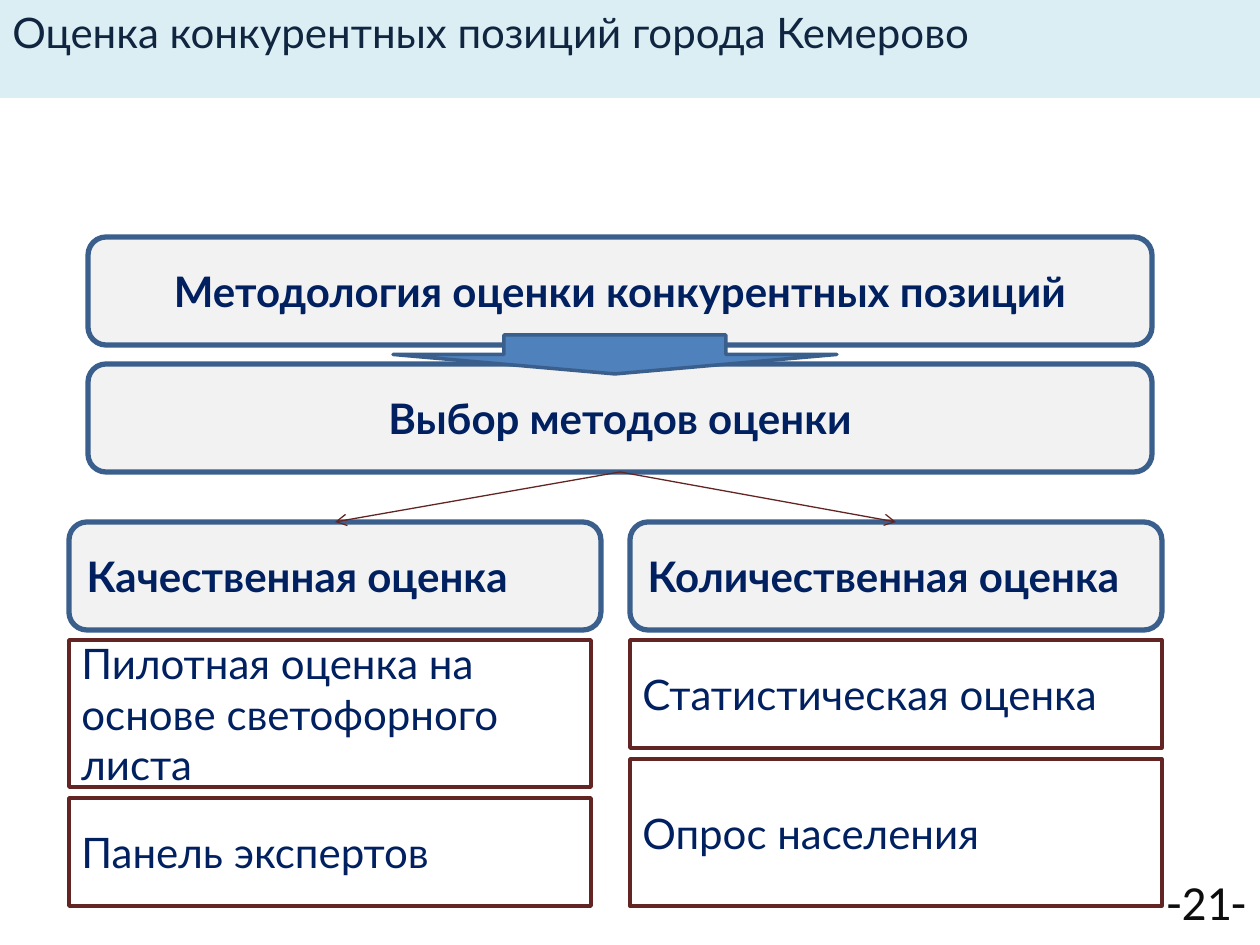
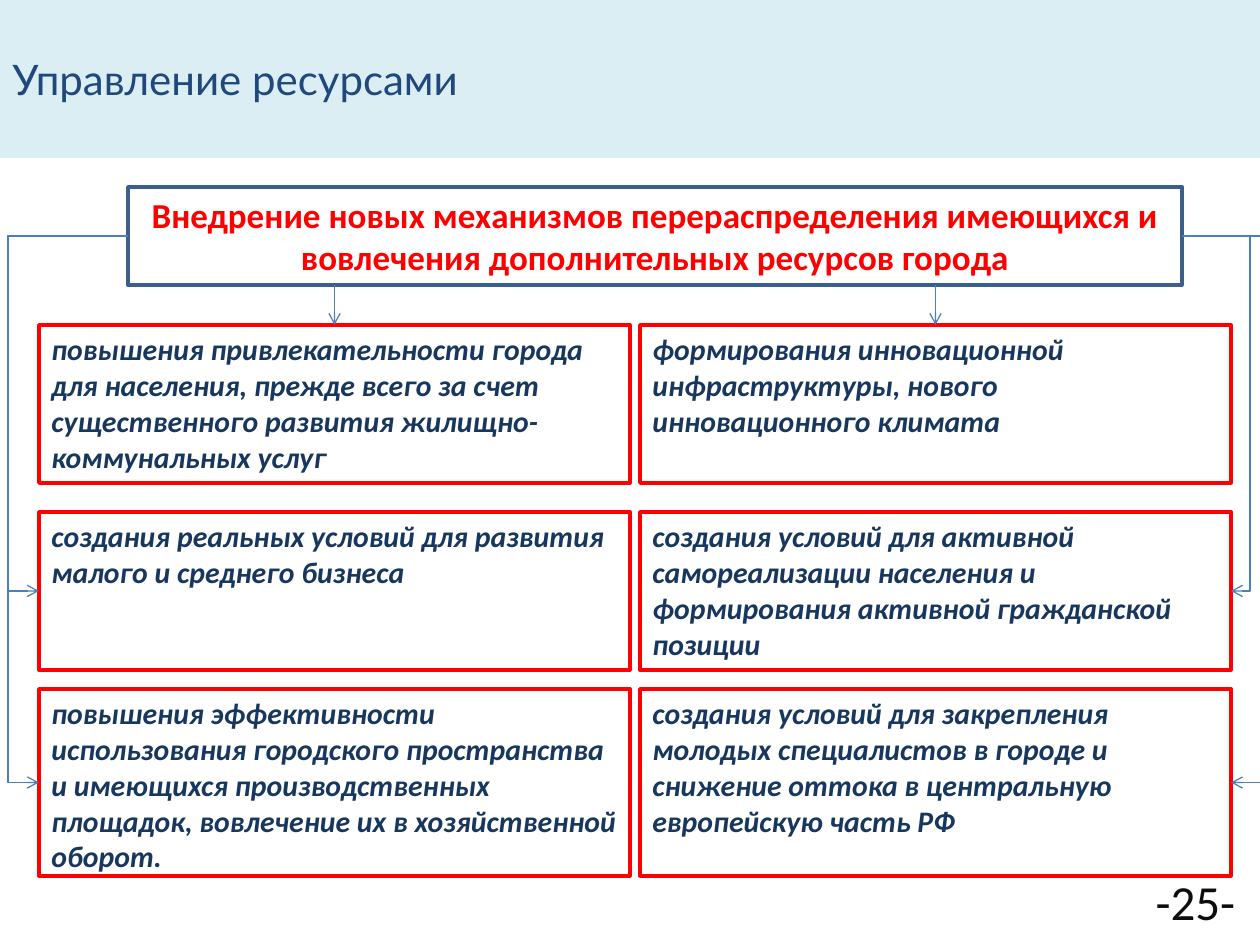
from lxml import etree
from pptx import Presentation
from pptx.dml.color import RGBColor as Rgb
from pptx.enum.shapes import MSO_CONNECTOR as Link, MSO_SHAPE as Form
from pptx.enum.text import MSO_ANCHOR as Anchor, PP_ALIGN as Align
from pptx.oxml.ns import qn
from pptx.util import Emu, Pt

HUES = {
    "band": "DBEEF4", "ink": "10253F", "title": "1F497D", "page": "0D0D0D",
    "navy": "002060", "slate": "17375E", "grey": "F2F2F2", "white": "FFFFFF",
    "edge": "3A5F8C", "blue": "4F81BD", "link": "4B7EBC", "wine": "632523",
    "red": "FF0000",
}


def px(num):
    return Emu(round(num * 914400 / 126))


def hue(name):
    return Rgb.from_string(HUES[name])


class Deck:
    """Holds the shared style and draws on the current slide."""

    def __init__(self):
        self.prs = Presentation()
        self.prs.slide_width, self.prs.slide_height = px(1260), px(945)

    def page(self, title, tall, tone, anchor, num, left):
        self.slide = self.prs.slides.add_slide(self.prs.slide_layouts[6])
        self.box((0, 0, 1260, tall), "band", None, text=title, tone=tone, anchor=anchor)
        mark = self.slide.shapes.add_textbox(*map(px, (left, 857, 129, 88)))
        self.label(mark, f"-{num}-", tone="page", size=28, font="Calibri", align=Align.CENTER)

    def label(self, shape, text, tone="navy", size=24, font="Lato", bold=False,
              italic=False, align=Align.LEFT, anchor=Anchor.MIDDLE):
        frame = shape.text_frame
        frame.word_wrap = True
        frame.vertical_anchor = anchor
        para = frame.paragraphs[0]
        para.alignment = align
        run = para.add_run()
        run.text = text
        run.font.name, run.font.size = font, Pt(size)
        run.font.bold, run.font.italic = bold, italic
        run.font.color.rgb = hue(tone)

    def box(self, area, fill, edge, width=2, form=Form.RECTANGLE, text=None, **style):
        shape = self.slide.shapes.add_shape(form, *map(px, area))
        shape.shadow.inherit = False
        shape.fill.solid()
        shape.fill.fore_color.rgb = hue(fill)
        if edge:
            shape.line.color.rgb = hue(edge)
            shape.line.width = Pt(width)
        else:
            shape.line.fill.background()
        if text:
            self.label(shape, text, **style)
        return shape

    def panel(self, area, text, align=Align.LEFT):
        return self.box(area, "grey", "edge", 3, Form.ROUNDED_RECTANGLE,
                        text, bold=True, align=align)

    def arrow(self, start, end, tone, kind=Link.STRAIGHT):
        line = self.slide.shapes.add_connector(kind, *map(px, start + end))
        line.line.color.rgb = hue(tone)
        line.line.width = Pt(0.75)
        props = line.element.spPr
        tail = etree.SubElement(props.find(qn("a:ln")), qn("a:tailEnd"))
        tail.set("type", "arrow")
        etree.SubElement(props, qn("a:effectLst"))
        return line

    def elbow(self, head, box, side, start, end, bend):
        line = self.arrow(start, end, "link", Link.ELBOW)
        line.begin_connect(head, side)
        line.end_connect(box, side)
        geom = line.element.spPr.find(qn("a:prstGeom"))
        vals = geom.find(qn("a:avLst"))
        if vals is None:
            vals = etree.SubElement(geom, qn("a:avLst"))
        ratio = (bend - start[0]) / (end[0] - start[0])
        guide = etree.SubElement(vals, qn("a:gd"))
        guide.set("name", "adj1")
        guide.set("fmla", f"val {round(ratio * 100000)}")


def rate(deck):
    deck.page("Оценка конкурентных позиций города Кемерово", 98, "ink", Anchor.TOP, 21, 1142)
    deck.panel((88, 237, 1064, 108), "Методология оценки конкурентных позиций", Align.CENTER)
    pick = deck.panel((88, 364, 1064, 108), "Выбор методов оценки", Align.CENTER)
    deck.box((393, 335, 444, 39), "blue", "edge", form=Form.DOWN_ARROW)
    groups = [
        (69, 522, "Качественная оценка",
         [(640, 147, "Пилотная оценка на основе светофорного листа"),
          (798, 108, "Панель экспертов")]),
        (630, 532, "Количественная оценка",
         [(640, 108, "Статистическая оценка"),
          (759, 147, "Опрос населения")]),
    ]
    for left, wide, name, items in groups:
        group = deck.panel((left, 522, 532, 108), name)
        line = deck.arrow((620, 472), (left + 266, 522), "wine")
        line.begin_connect(pick, 2)
        line.end_connect(group, 0)
        for top, tall, text in items:
            deck.box((left, top, wide, tall), "white", "wine", text=text)


def manage(deck):
    deck.page("Управление ресурсами", 158, "title", Anchor.MIDDLE, 25, 1131)
    head = deck.box(
        (128, 187, 1054, 98), "white", "edge",
        text="Внедрение новых механизмов перераспределения имеющихся и "
             "вовлечения дополнительных ресурсов города",
        tone="red", size=20, font="Calibri", bold=True, align=Align.CENTER)
    rows = [(325, 158), (512, 158), (689, 187)]
    wide = 591
    sides = [
        (39, 1, 128, 39, (8, 8), [
            "повышения привлекательности города для населения, прежде всего за счет "
            "существенного развития жилищно-коммунальных услуг",
            "создания реальных условий для развития малого и среднего бизнеса",
            "повышения эффективности использования городского пространства и имеющихся "
            "производственных площадок, вовлечение их в хозяйственной оборот."]),
        (640, 3, 1182, 640 + wide, (1250, 1262), [
            "формирования инновационной инфраструктуры, нового инновационного климата",
            "создания условий для активной самореализации населения и формирования "
            "активной гражданской позиции",
            "создания условий для закрепления молодых специалистов в городе и снижение "
            "оттока в центральную европейскую часть РФ"]),
    ]
    for left, side, start, end, bends, texts in sides:
        boxes = [deck.box((left, top, wide, tall), "white", "red", text=text, tone="slate",
                          size=17, font="Calibri", bold=True, italic=True, anchor=Anchor.TOP)
                 for (top, tall), text in zip(rows, texts)]
        mid = left + wide / 2
        deck.arrow((mid, 285), (mid, 325), "link").end_connect(boxes[0], 0)
        for box, (top, tall), bend in zip(boxes[1:], rows[1:], bends):
            deck.elbow(head, box, side, (start, 236), (end, top + tall / 2), bend)


def main():
    deck = Deck()
    rate(deck)
    manage(deck)
    deck.prs.save("out.pptx")


if __name__ == "__main__":
    main()
